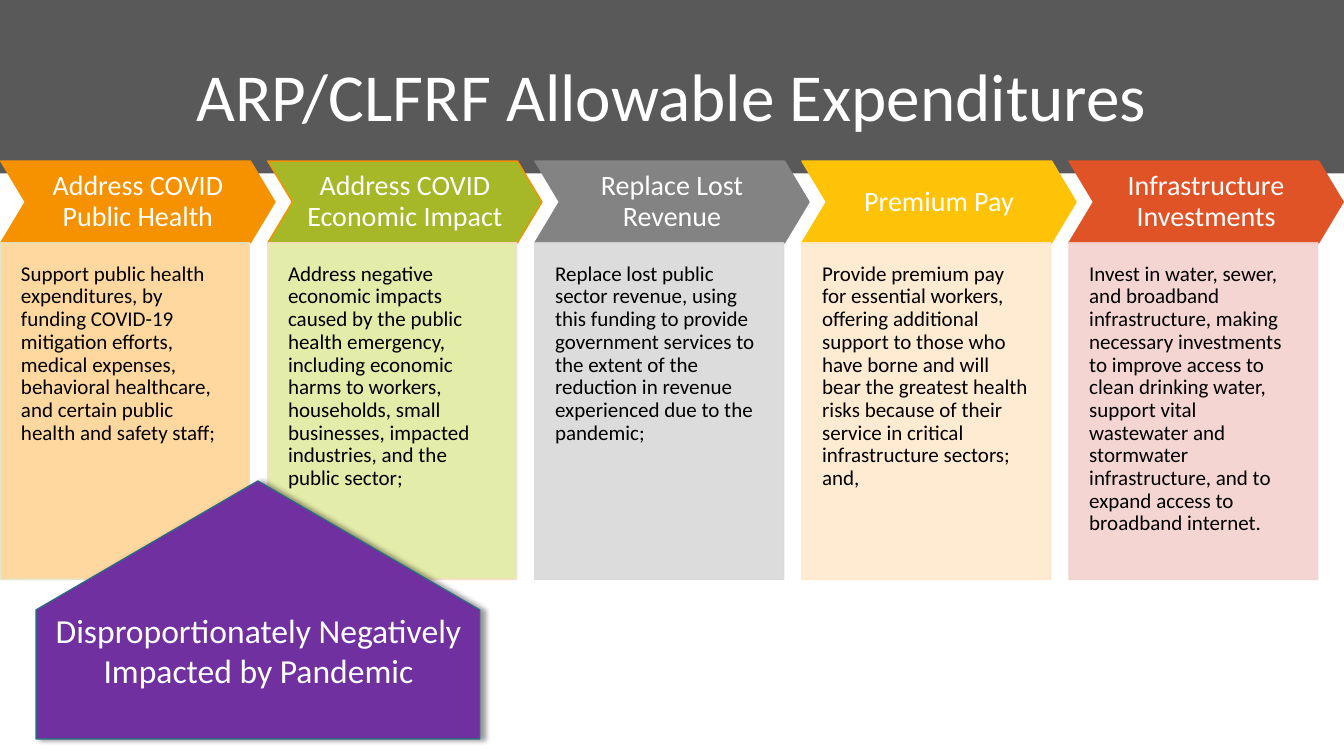
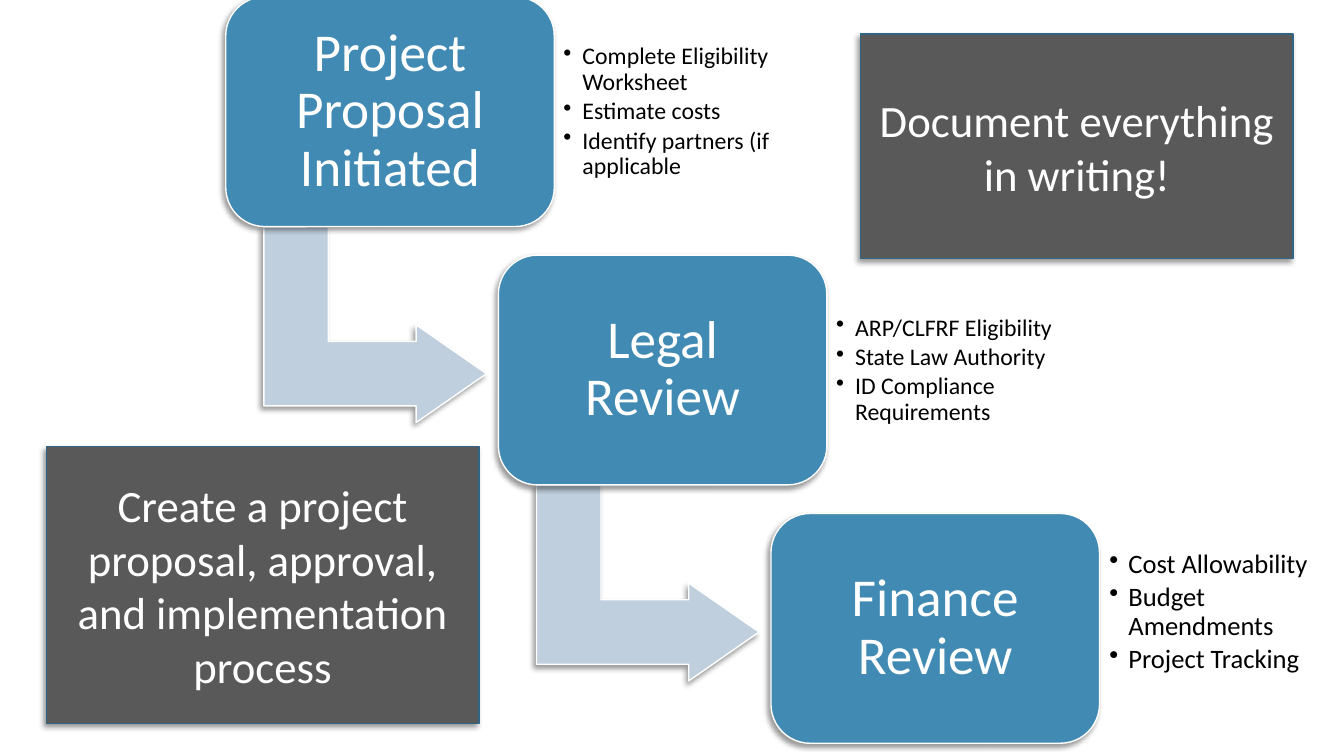
import dataclasses
import typing

import pptx
import pptx.dml.color
import pptx.enum.shapes
import pptx.enum.text
import pptx.oxml
import pptx.oxml.ns
import pptx.util

Cm = pptx.util.Cm
Pt = pptx.util.Pt
RGB = pptx.dml.color.RGBColor
SHAPE = pptx.enum.shapes.MSO_SHAPE
ALIGN = pptx.enum.text.PP_ALIGN
ANCHOR = pptx.enum.text.MSO_ANCHOR

# Shared look
FONT = "Calibri"
WHITE = RGB(0xFF, 0xFF, 0xFF)
BLACK = RGB(0x00, 0x00, 0x00)
CHARCOAL = RGB(0x59, 0x59, 0x59)
TEAL = RGB(0x30, 0x66, 0x84)
BLUE = RGB(0x41, 0x8A, 0xB3)
PALE_BLUE = RGB(0xC0, 0xCF, 0xDD)
PURPLE = RGB(0x70, 0x30, 0xA0)
ORANGE = RGB(0xF6, 0x92, 0x00)
LIGHT_ORANGE = RGB(0xFF, 0xD4, 0x95)
SAGE = RGB(0xE1, 0xE6, 0xCD)
GREEN = RGB(0xA6, 0xB7, 0x27)
LIGHT_GREEN = RGB(0xE2, 0xEB, 0xA0)
PEACH = RGB(0xFB, 0xDC, 0xCC)
GREY = RGB(0x83, 0x83, 0x83)
LIGHT_GREY = RGB(0xD9, 0xD9, 0xD9)
YELLOW = RGB(0xFE, 0xC3, 0x06)
CREAM = RGB(0xFF, 0xE9, 0xCC)
RED = RGB(0xDF, 0x53, 0x27)
PINK = RGB(0xF3, 0xD1, 0xCD)

SLIDE_W, SLIDE_H = 33.87, 19.05
TITLE_ONLY, BLANK = 5, 6


@dataclasses.dataclass(frozen=True)
class Box:
    """Left, top, width and height in centimetres."""
    x: float
    y: float
    w: float
    h: float

    def emu(self) -> tuple:
        return Cm(self.x), Cm(self.y), Cm(self.w), Cm(self.h)


@dataclasses.dataclass(frozen=True)
class TextStyle:
    size: float
    color: RGB = WHITE
    align: typing.Any = ALIGN.CENTER
    anchor: typing.Any = ANCHOR.MIDDLE
    spacing: float = 1.0
    after: float = 0
    insets: tuple = (0.25, 0.13, 0.25, 0.13)
    bullet: bool = False


@dataclasses.dataclass(frozen=True)
class Category:
    heading: str
    detail: str
    fill: RGB
    line: RGB
    detail_fill: RGB
    detail_line: RGB


@dataclasses.dataclass(frozen=True)
class Step:
    name: str
    tasks: tuple
    size: float = 17
    inset: float = 0.23
    lift: float = 0


@dataclasses.dataclass(frozen=True)
class Note:
    text: str
    box: Box


TITLE = TextStyle(48, spacing=0.9)
HEADING = TextStyle(20, spacing=0.9, insets=(0.25,) * 4)
DETAIL = TextStyle(15, BLACK, ALIGN.LEFT, ANCHOR.TOP, 0.9,
                   insets=(0.51, 0.51, 0.51, 0.99))
CALLOUT = TextStyle(24)
STEP = TextStyle(38, spacing=0.9, insets=(0.41,) * 4)
NOTE = TextStyle(32)

CATEGORIES = (
    Category("Address COVID Public Health",
             "Support public health expenditures, by funding COVID-19 mitigation "
             "efforts, medical expenses, behavioral healthcare, and certain public "
             "health and safety staff;",
             ORANGE, ORANGE, LIGHT_ORANGE, SAGE),
    Category("Address COVID Economic Impact",
             "Address negative economic impacts caused by the public health "
             "emergency, including economic harms to workers, households, small "
             "businesses, impacted industries, and the public sector;",
             GREEN, ORANGE, LIGHT_GREEN, PEACH),
    Category("Replace Lost Revenue",
             "Replace lost public sector revenue, using this funding to provide "
             "government services to the extent of the reduction in revenue "
             "experienced due to the pandemic;",
             GREY, GREY, LIGHT_GREY, LIGHT_GREY),
    Category("Premium Pay",
             "Provide premium pay for essential workers, offering additional "
             "support to those who have borne and will bear the greatest health "
             "risks because of their service in critical infrastructure sectors; "
             "and,",
             YELLOW, YELLOW, CREAM, CREAM),
    Category("Infrastructure Investments",
             "Invest in water, sewer, and broadband infrastructure, making "
             "necessary investments to improve access to clean drinking water, "
             "support vital wastewater and stormwater infrastructure, and to "
             "expand access to broadband internet.",
             RED, RED, PINK, PINK),
)
STEPS = (
    Step("Project Proposal Initiated",
         ("Complete Eligibility Worksheet", "Estimate costs",
          "Identify partners (if applicable")),
    Step("Legal Review",
         ("ARP/CLFRF Eligibility", "State Law Authority",
          "ID Compliance Requirements")),
    Step("Finance Review",
         ("Cost Allowability", "Budget Amendments", "Project Tracking"),
         size=19, inset=0.25, lift=0.42),
)
NOTES = (
    Note("Create a project proposal, approval, and implementation process",
         Box(1.17, 11.25, 10.9, 6.99)),
    Note("Document everything in writing!", Box(21.69, 0.86, 10.9, 5.66)),
)


def set_all(obj: typing.Any, values: dict) -> None:
    for name, value in values.items():
        setattr(obj, name, value)


def add_bullet(p: typing.Any) -> None:
    pPr = p._p.get_or_add_pPr()
    pPr.set("marL", str(Cm(0.48)))
    pPr.set("indent", str(-Cm(0.48)))
    bu = pptx.oxml.parse_xml(
        f'<a:buChar {pptx.oxml.ns.nsdecls("a")} char="•"/>')
    pPr.append(bu)


def write(sp: typing.Any, style: TextStyle, *texts: str) -> None:
    """Fill a shape, text box or placeholder with styled paragraphs."""
    tf = sp.text_frame
    left, top, right, bottom = map(Cm, style.insets)
    set_all(tf, {"word_wrap": True, "vertical_anchor": style.anchor,
                 "auto_size": pptx.enum.text.MSO_AUTO_SIZE.NONE,
                 "margin_left": left, "margin_top": top,
                 "margin_right": right, "margin_bottom": bottom})
    for i, text in enumerate(texts):
        p = tf.add_paragraph() if i else tf.paragraphs[0]
        if style.bullet:
            add_bullet(p)
        set_all(p, {"alignment": style.align, "line_spacing": style.spacing,
                    "space_before": Pt(0), "space_after": Pt(style.after)})
        r = p.add_run()
        r.text = text
        set_all(r.font, {"name": FONT, "size": Pt(style.size)})
        r.font.color.rgb = style.color


def add_text(s: typing.Any, box: Box, style: TextStyle, *texts: str) -> None:
    write(s.shapes.add_textbox(*box.emu()), style, *texts)


def add_panel(s: typing.Any, kind: typing.Any, box: Box, fill: RGB,
              line: typing.Optional[RGB] = None, adjust: tuple = (),
              rotation: float = 0) -> typing.Any:
    sp = s.shapes.add_shape(kind, *box.emu())
    sp.shadow.inherit = False
    sp.rotation = rotation
    sp.fill.solid()
    sp.fill.fore_color.rgb = fill
    if line is None:
        sp.line.fill.background()
    else:
        sp.line.color.rgb = line
        sp.line.width = Pt(1)
    for i, value in enumerate(adjust):
        sp.adjustments[i] = value
    return sp


def cast_shadow(sp: typing.Any, degrees: int = 135) -> None:
    effects = sp.element.spPr.find(pptx.oxml.ns.qn("a:effectLst"))
    effects.append(pptx.oxml.parse_xml(
        f'<a:outerShdw {pptx.oxml.ns.nsdecls("a")} blurRad="{Pt(4)}" '
        f'dist="{Pt(3)}" dir="{degrees * 60000}" rotWithShape="0">'
        '<a:srgbClr val="000000"><a:alpha val="40000"/></a:srgbClr>'
        '</a:outerShdw>'))


def set_opacity(sp: typing.Any, percent: int) -> None:
    for color in sp.element.spPr.iter(pptx.oxml.ns.qn("a:srgbClr")):
        color.append(pptx.oxml.parse_xml(
            f'<a:alpha {pptx.oxml.ns.nsdecls("a")} val="{percent * 1000}"/>'))


def add_title(s: typing.Any, text: str) -> None:
    """Title over a full-width band, the band sent behind it."""
    title = s.shapes.title
    band = add_panel(s, SHAPE.RECTANGLE, Box(0, 0, SLIDE_W, 4.37), CHARCOAL)
    title.element.addprevious(band.element)
    left, top, width, height = Box(1.78, 0.94, 30.3, 3.15).emu()
    set_all(title, {"left": left, "top": top, "width": width, "height": height})
    write(title, TITLE, text)


def add_category(s: typing.Any, index: int, c: Category) -> None:
    x = 0.02 + 6.73 * index
    head = add_panel(s, SHAPE.CHEVRON, Box(x, 4.06, 6.91, 2.06),
                     c.fill, c.line, (0.3,))
    write(head, HEADING, c.heading)
    body = add_panel(s, SHAPE.RECTANGLE, Box(x, 6.12, 6.27, 8.48),
                     c.detail_fill, c.detail_line)
    set_opacity(body, 90)
    write(body, DETAIL, c.detail)


def add_step(s: typing.Any, index: int, step: Step) -> None:
    x, y = 5.69 + 6.87 * index, -0.08 + 6.51 * index
    if index < len(STEPS) - 1:
        arrow = add_panel(s, SHAPE.BENT_UP_ARROW,
                          Box(x + 1.3, y + 5.46, 4.93, 5.61),
                          PALE_BLUE, WHITE, (0.33, 0.25, 0.36), 90)
        cast_shadow(arrow)
    sp = add_panel(s, SHAPE.ROUNDED_RECTANGLE, Box(x, y, 8.28, 5.79),
                   BLUE, WHITE, (0.17,))
    cast_shadow(sp)
    write(sp, STEP, step.name)
    tasks = TextStyle(step.size, BLACK, ALIGN.LEFT, spacing=0.9,
                      after=step.size * 0.15, insets=(step.inset,) * 4,
                      bullet=True)
    add_text(s, Box(x + 8.28, y + 0.56 - step.lift, 6.02, 4.7),
             tasks, *step.tasks)


def build_expenditures(prs: typing.Any) -> None:
    s = prs.slides.add_slide(prs.slide_layouts[TITLE_ONLY])
    add_title(s, "ARP/CLFRF Allowable Expenditures")
    for i, category in enumerate(CATEGORIES):
        add_category(s, i, category)
    # Upward callout below the first two columns
    callout = add_panel(s, SHAPE.PENTAGON, Box(3.25, 9.78, 6.5, 11.18),
                        PURPLE, TEAL, rotation=270)
    cast_shadow(callout, 0)
    add_text(s, Box(0.56, 15.37, 11.91, 2.01), CALLOUT,
             "Disproportionately Negatively Impacted by Pandemic")


def build_process(prs: typing.Any) -> None:
    s = prs.slides.add_slide(prs.slide_layouts[BLANK])
    for i, step in enumerate(STEPS):
        add_step(s, i, step)
    for note in NOTES:
        sp = add_panel(s, SHAPE.RECTANGLE, note.box, CHARCOAL, TEAL)
        cast_shadow(sp)
        write(sp, NOTE, note.text)


def main() -> None:
    prs = pptx.Presentation()
    set_all(prs, {"slide_width": Cm(SLIDE_W), "slide_height": Cm(SLIDE_H)})
    build_expenditures(prs)
    build_process(prs)
    prs.save("out.pptx")


if __name__ == "__main__":
    main()
